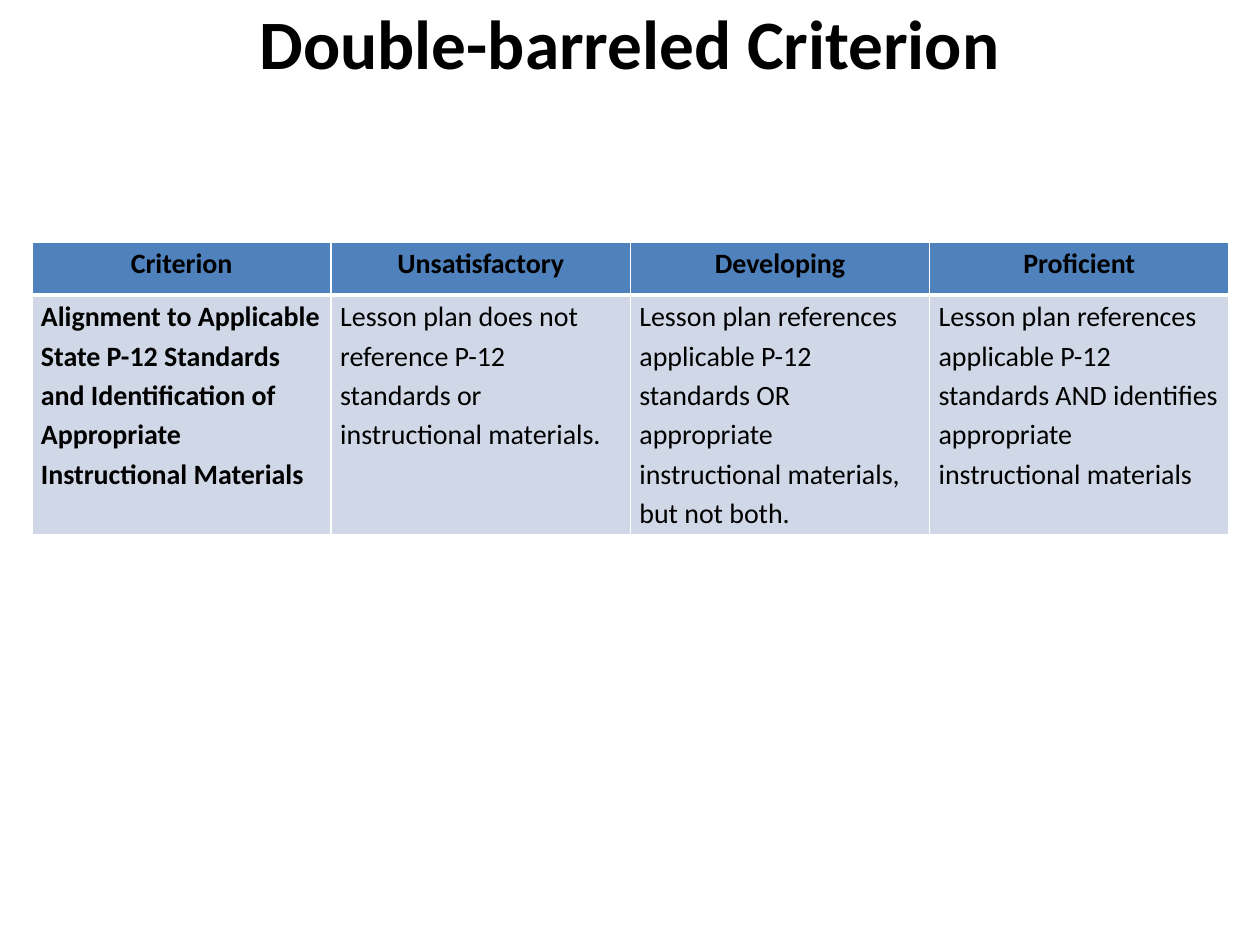
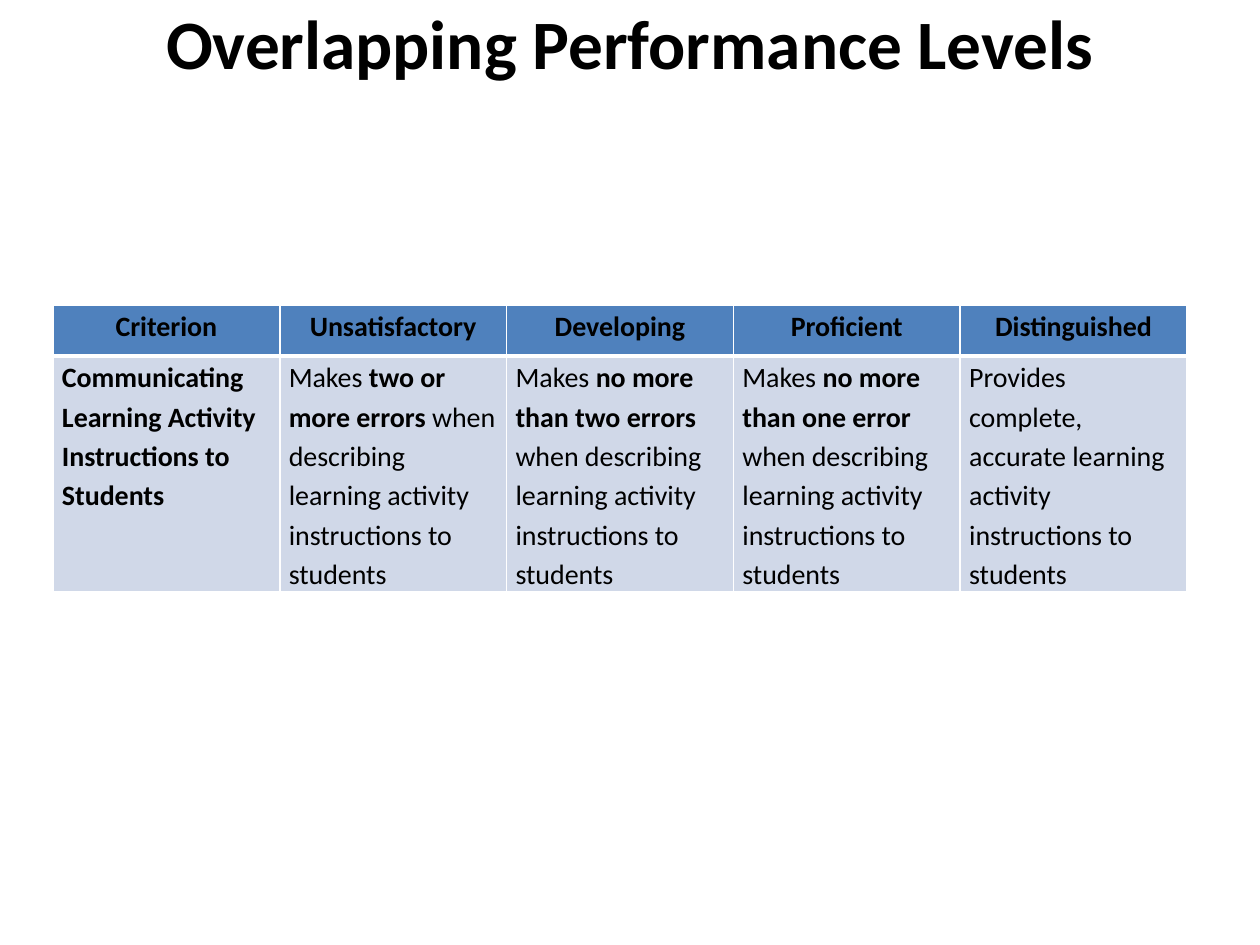
from dataclasses import dataclass
from lxml.etree import SubElement
from pptx import Presentation
from pptx.dml.color import RGBColor
from pptx.enum.text import MSO_ANCHOR, MSO_AUTO_SIZE, PP_ALIGN
from pptx.oxml.ns import qn
from pptx.util import Emu, Pt

SCALE = 914400 / 126  # EMU in one px


def px(n):
    return Emu(round(n * SCALE))


@dataclass(frozen=True)
class Theme:
    font: str = "Calibri"
    ink: str = "000000"
    head: str = "4F81BD"
    body: str = "D0D8E8"
    rule: str = "FFFFFF"
    title: float = 39.6
    text: float = 16
    thin: int = 1
    thick: int = 3
    lead: float = 1.15


class Deck:
    def __init__(self, theme):
        self.theme = theme
        self.prs = Presentation()
        self.prs.slide_width, self.prs.slide_height = px(1260), px(945)
        self.slide = None

    def style(self, par, size, bold=None):
        font = par.font
        font.name, font.size = self.theme.font, Pt(size)
        font.color.rgb = RGBColor.from_string(self.theme.ink)
        font.bold = bold

    def title(self, text):
        """Start a slide with its title."""
        self.slide = self.prs.slides.add_slide(self.prs.slide_layouts[5])
        box = self.slide.shapes.title
        box.left, box.top, box.width, box.height = map(px, (63, 0, 1134, 84))
        frame = box.text_frame
        frame.text = text
        frame.auto_size = MSO_AUTO_SIZE.NONE
        frame.vertical_anchor = MSO_ANCHOR.MIDDLE
        par = frame.paragraphs[0]
        par.alignment = PP_ALIGN.CENTER
        self.style(par, self.theme.title, True)

    def border(self, cell, side, width):
        line = SubElement(cell._tc.get_or_add_tcPr(), qn(f"a:ln{side}"),
                          w=str(Pt(width)))
        fill = SubElement(line, qn("a:solidFill"))
        SubElement(fill, qn("a:srgbClr"), val=self.theme.rule)

    def cell(self, cell, text, head, bold):
        """Fill one cell; asterisks enclose bold words."""
        look = self.theme
        cell.margin_left = cell.margin_right = px(9)
        cell.margin_top = cell.margin_bottom = 0
        par = cell.text_frame.paragraphs[0]
        par.alignment = PP_ALIGN.CENTER if head else PP_ALIGN.LEFT
        par.line_spacing = look.lead
        parts = text.split("*")
        self.style(par, look.text, bold if len(parts) == 1 else None)
        for i, part in enumerate(parts):
            run = par.add_run()
            run.text = part
            if len(parts) > 1:
                run.font.bold = i % 2 == 1
        # The thick rule lies between the header and the body
        top, low = (look.thin, look.thick) if head else (look.thick, look.thin)
        for side, width in zip("LRTB", (look.thin, look.thin, top, low)):
            self.border(cell, side, width)
        cell.fill.solid()
        cell.fill.fore_color.rgb = RGBColor.from_string(
            look.head if head else look.body)

    def rubric(self, left, top, width, heights, rows):
        """Add a table with equal columns and a header row."""
        count = len(rows[0])
        table = self.slide.shapes.add_table(
            len(rows), count, px(left), px(top), px(width),
            px(sum(heights))).table
        table.first_row = table.horz_banding = False
        for col in table.columns:
            col.width = px(width / count)
        for r, (height, row) in enumerate(zip(heights, rows)):
            table.rows[r].height = px(height)
            for c, text in enumerate(row):
                self.cell(table.cell(r, c), text, r == 0, r == 0 or c == 0)


LEVELS = ["Criterion", "Unsatisfactory", "Developing", "Proficient"]
TASK = "when describing learning activity instructions to students"


def main():
    deck = Deck(Theme())

    # One criterion that asks two things
    deck.title("Double-barreled Criterion")
    deck.rubric(32, 242, 1197, (53, 240), [LEVELS, [
        "Alignment to Applicable State P-12 Standards and Identification of "
        "Appropriate Instructional Materials",
        "Lesson plan does not reference P-12 standards or instructional "
        "materials.",
        "Lesson plan references applicable P-12 standards OR appropriate "
        "instructional materials, but not both.",
        "Lesson plan references applicable P-12 standards AND identifies "
        "appropriate instructional materials",
    ]])

    # Levels whose error counts overlap
    limits = ("two or more errors", "no more than two errors",
              "no more than one error")
    deck.title("Overlapping Performance Levels")
    deck.rubric(53, 305, 1134, (51, 230), [LEVELS + ["Distinguished"], [
        "Communicating Learning Activity Instructions to Students",
        *(f"Makes *{limit} *{TASK}" for limit in limits),
        "Provides complete, accurate learning activity instructions to "
        "students",
    ]])

    deck.prs.save("out.pptx")


if __name__ == "__main__":
    main()
